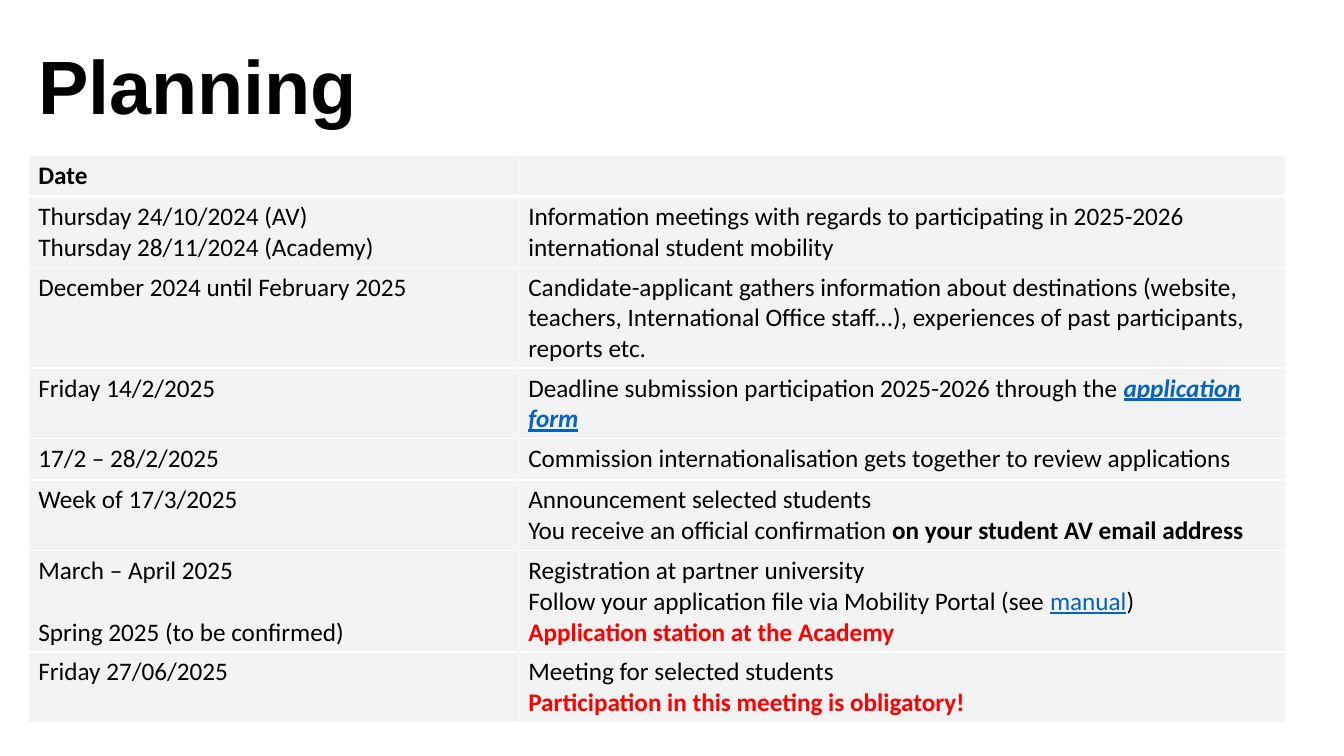
import pptx
import pptx.dml.color
import pptx.oxml
import pptx.oxml.ns
import pptx.util

Inches = pptx.util.Inches
Pt = pptx.util.Pt
RGBColor = pptx.dml.color.RGBColor

BLACK = RGBColor(0x00, 0x00, 0x00)
WHITE = RGBColor(0xFF, 0xFF, 0xFF)
CELL_GREY = RGBColor(0xF3, 0xF3, 0xF3)
LINK_BLUE = RGBColor(0x05, 0x63, 0xC1)
ALERT_RED = RGBColor(0xFF, 0x00, 0x00)

# Run styles
BOLD = {"bold": True}
LINK = {"color": LINK_BLUE, "underline": True}
STRONG_LINK = {**LINK, "bold": True, "italic": True}
ALERT = {"color": ALERT_RED, "bold": True}

# Each cell is a list of paragraphs, each paragraph a list of (text, style) runs
PLANNING = [
    ([[("Date", BOLD)]], []),
    ([[("Thursday 24/10/2024 (AV)", {})],
      [("Thursday 28/11/2024 (Academy)", {})]],
     [[("Information meetings with regards to participating in 2025-2026 "
        "international student mobility", {})]]),
    ([[("December 2024 until February 2025", {})]],
     [[("Candidate-applicant gathers information about destinations (website, "
        "teachers, International Office staff...), experiences of past "
        "participants, reports etc.", {})]]),
    ([[("Friday 14/2/2025", {})]],
     [[("Deadline submission participation 2025-2026 through the ", {}),
       ("application form", STRONG_LINK)]]),
    ([[("17/2 – 28/2/2025", {})]],
     [[("Commission internationalisation gets together to review applications", {})]]),
    ([[("Week of 17/3/2025", {})]],
     [[("Announcement selected students", {})],
      [("You receive an official confirmation ", {}),
       ("on your student AV email address", BOLD)]]),
    ([[("March – April 2025", {})],
      [("Spring 2025 (to be confirmed)", {})]],
     [[("Registration at partner university", {})],
      [("Follow your application file via Mobility Portal (see ", {}),
       ("manual", LINK), (")", {})],
      [("Application station at the Academy", ALERT)]]),
    ([[("Friday 27/06/2025", {})]],
     [[("Meeting for selected students", {})],
      [("Participation in this meeting is obligatory!", ALERT)]]),
]
REGISTRATION_ROW = 6


class SlideBuilder:
    """Holds the style and the current slide."""

    title_font, title_size = "Arial", 54
    body_font, body_size = "Calibri", 18

    def __init__(self, presentation):
        self.slide = presentation.slides.add_slide(presentation.slide_layouts[6])

    def run(self, paragraph, text, font, size, color=BLACK, bold=False,
            italic=False, underline=False):
        run = paragraph.add_run()
        run.text = text
        run.font.name = font
        run.font.size = Pt(size)
        run.font.color.rgb = color
        run.font.bold = bold
        run.font.italic = italic
        run.font.underline = underline

    def title(self, text, left, top, width, height):
        shape = self.slide.shapes.add_textbox(
            Inches(left), Inches(top), Inches(width), Inches(height))
        shape.text_frame.word_wrap = True
        paragraph = shape.text_frame.paragraphs[0]
        paragraph.line_spacing = 0.9
        self.run(paragraph, text, self.title_font, self.title_size, bold=True)

    def borders(self, cell, bottom_width):
        properties = cell._tc.get_or_add_tcPr()
        widths = {"L": 1, "R": 1, "T": 1, "B": bottom_width}
        for index, (side, width) in enumerate(widths.items()):
            properties.insert(index, pptx.oxml.parse_xml(
                f'<a:ln{side} {pptx.oxml.ns.nsdecls("a")} w="{Pt(width)}">'
                f'<a:solidFill><a:srgbClr val="{WHITE}"/></a:solidFill>'
                f'</a:ln{side}>'))

    def cell(self, cell, paragraphs, bottom_width):
        cell.fill.solid()
        cell.fill.fore_color.rgb = CELL_GREY
        self.borders(cell, bottom_width)
        frame = cell.text_frame
        for index, runs in enumerate(paragraphs):
            paragraph = frame.add_paragraph() if index else frame.paragraphs[0]
            for text, style in runs:
                self.run(paragraph, text, self.body_font, self.body_size, **style)

    def table(self, rows, left, top, height, column_widths, row_height):
        shape = self.slide.shapes.add_table(
            len(rows), len(column_widths), Inches(left), Inches(top),
            Inches(sum(column_widths)), Inches(height))
        table = shape.table
        for column, width in zip(table.columns, column_widths):
            column.width = Inches(width)
        for row_index, contents in enumerate(rows):
            table.rows[row_index].height = Inches(row_height)
            for column_index, paragraphs in enumerate(contents):
                self.cell(table.cell(row_index, column_index), paragraphs,
                          bottom_width=1 if row_index else 3)
        shape.height = Inches(height)
        return table


def main():
    presentation = pptx.Presentation()
    presentation.slide_width = Inches(13.33)
    presentation.slide_height = Inches(7.5)
    builder = SlideBuilder(presentation)

    # Title
    builder.title("Planning", 0.28, 0.44, 10, 1.25)

    # Planning table; rows grow with their text
    table = builder.table(PLANNING, 0.28, 1.54, 5.61, [4.86, 7.61], 0.41)

    # One line of space brings the spring date level with the application station
    spring_date = table.cell(REGISTRATION_ROW, 0).text_frame.paragraphs[1]
    spring_date.space_before = Pt(22)

    presentation.save("out.pptx")


if __name__ == "__main__":
    main()
